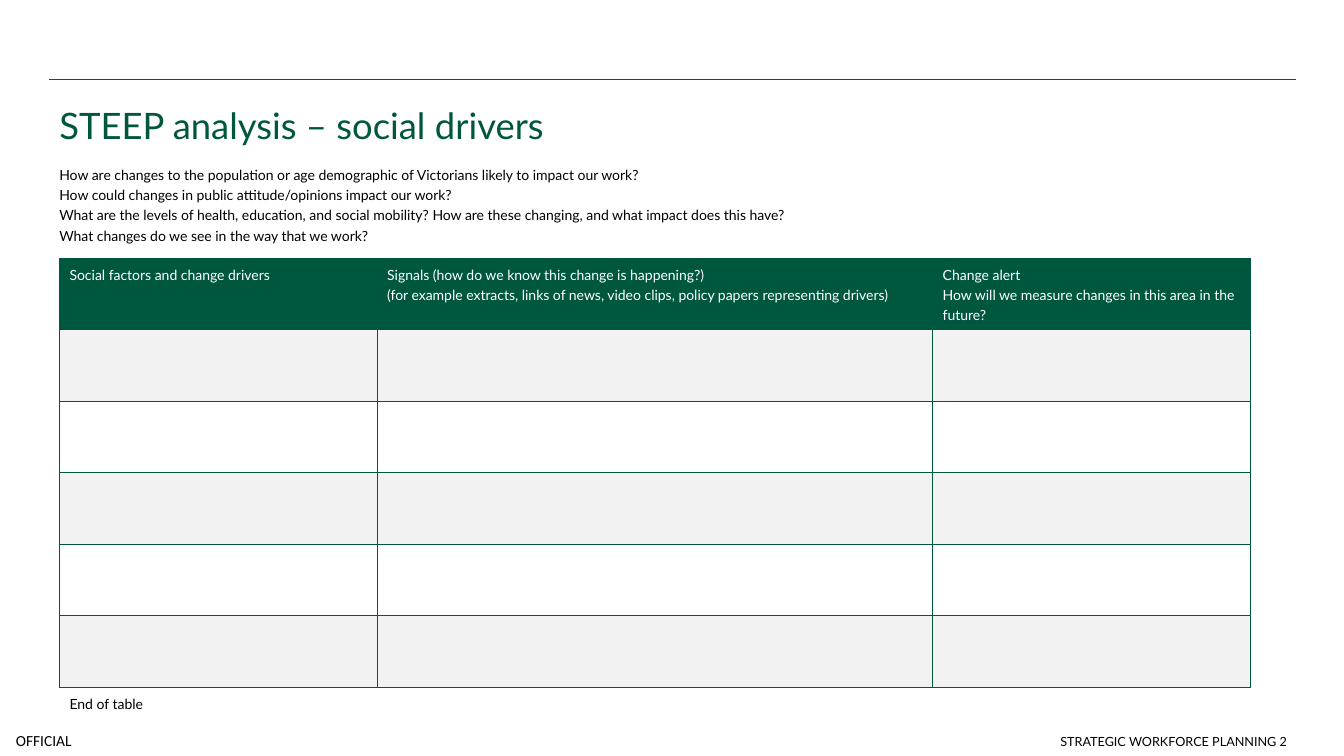
from pptx import Presentation
from pptx.dml.color import RGBColor
from pptx.enum.shapes import MSO_CONNECTOR
from pptx.enum.text import MSO_ANCHOR as Anchor, PP_ALIGN as Align
from pptx.oxml.ns import qn
from pptx.util import Inches, Pt
from lxml.etree import SubElement

GREEN, GREY, WHITE, BLACK = "00573F", "F2F2F2", "FFFFFF", "000000"
QUESTIONS = [
    "How are changes to the population or age demographic of Victorians likely to impact our work?",
    "How could changes in public attitude/opinions impact our work?",
    "What are the levels of health, education, and social mobility? "
    "How are these changing, and what impact does this have?",
    "What changes do we see in the way that we work?",
]
HEADINGS = [
    ["Social factors and change drivers"],
    ["Signals (how do we know this change is happening?)\n"
     "(for example extracts, links of news, video clips, policy papers representing drivers)"],
    ["Change alert", "How will we measure changes in this area in the future?"],
]
COLUMN_WIDTHS = [3.15, 5.51, 3.15]
ROW_HEIGHTS = [0.71] * 6 + [0.39]


def color(value):
    return RGBColor.from_string(value)


def write(frame, lines, size=10, ink=BLACK, font="Lato", align=Align.LEFT, spacing=1.2):
    frame.word_wrap = True
    for index, line in enumerate(lines):
        para = frame.add_paragraph() if index else frame.paragraphs[0]
        para.alignment = align
        para.line_spacing = spacing
        for number, part in enumerate(line.split("\n")):
            if number:
                para.add_line_break()
            span = para.add_run()
            span.text = part
            span.font.size = Pt(size)
            span.font.name = font
            span.font.bold = False
            span.font.color.rgb = color(ink)


def add_text(page, place, lines, anchor=Anchor.TOP, inset=None, **style):
    box = page.shapes.add_textbox(*map(Inches, place))
    frame = box.text_frame
    frame.vertical_anchor = anchor
    if inset is not None:
        frame.margin_left = frame.margin_right = Inches(inset)
        frame.margin_top = frame.margin_bottom = Inches(inset)
    write(frame, lines, **style)


def add_rule(page, left, right, top):
    rule = page.shapes.add_connector(
        MSO_CONNECTOR.STRAIGHT, Inches(left), Inches(top), Inches(right), Inches(top))
    rule.line.color.rgb = color(GREEN)
    rule.line.width = Pt(1)
    SubElement(rule._element.spPr, qn("a:effectLst"))


def set_borders(cell, drawn):
    properties = cell._tc.get_or_add_tcPr()
    for side in "LRTB":
        edge = SubElement(properties, qn(f"a:ln{side}"), w=str(Pt(0.5)))
        if side in drawn:
            fill = SubElement(edge, qn("a:solidFill"))
            SubElement(fill, qn("a:srgbClr"), val=GREEN)
        else:
            SubElement(edge, qn("a:noFill"))


def add_driver_table(page, left, top):
    last = len(ROW_HEIGHTS) - 1
    table = page.shapes.add_table(
        len(ROW_HEIGHTS), len(COLUMN_WIDTHS), Inches(left), Inches(top),
        Inches(sum(COLUMN_WIDTHS)), Inches(sum(ROW_HEIGHTS))).table
    table.first_row = table.horz_banding = False
    for column, width in zip(table.columns, COLUMN_WIDTHS):
        column.width = Inches(width)
    for row, height in zip(table.rows, ROW_HEIGHTS):
        row.height = Inches(height)

    contents = {(0, column): lines for column, lines in enumerate(HEADINGS)}
    contents[last, 0] = ["End of table"]
    for row in range(last + 1):
        shade = GREEN if row == 0 else GREY if row % 2 else WHITE
        for column in range(len(COLUMN_WIDTHS)):
            cell = table.cell(row, column)
            set_borders(cell, "T" if row == last else "LRTB")
            cell.fill.solid()
            cell.fill.fore_color.rgb = color(shade)
            write(cell.text_frame, contents.get((row, column), [""]),
                  ink=BLACK if row else WHITE)


def main():
    deck = Presentation()
    deck.slide_width, deck.slide_height = Inches(13.33), Inches(7.5)
    page = deck.slides.add_slide(deck.slide_layouts[6])
    add_rule(page, 0.49, 12.85, 0.79)
    add_text(page, (0, 7.19, 0.87, 0.31), ["OFFICIAL"], Anchor.MIDDLE, 0,
             size=11, font="Calibri", align=Align.CENTER, spacing=1)
    add_text(page, (0.49, 0.89, 12.36, 1.02), ["STEEP analysis – social drivers"],
             size=26, ink=GREEN)
    add_text(page, (0.49, 1.57, 12.36, 0.98), QUESTIONS)
    add_driver_table(page, 0.59, 2.56)
    add_text(page, (6.84, 7.09, 6.02, 0.39), ["STRATEGIC WORKFORCE PLANNING 2"],
             Anchor.BOTTOM, size=9, align=Align.RIGHT, spacing=1)
    deck.save("out.pptx")


if __name__ == "__main__":
    main()
